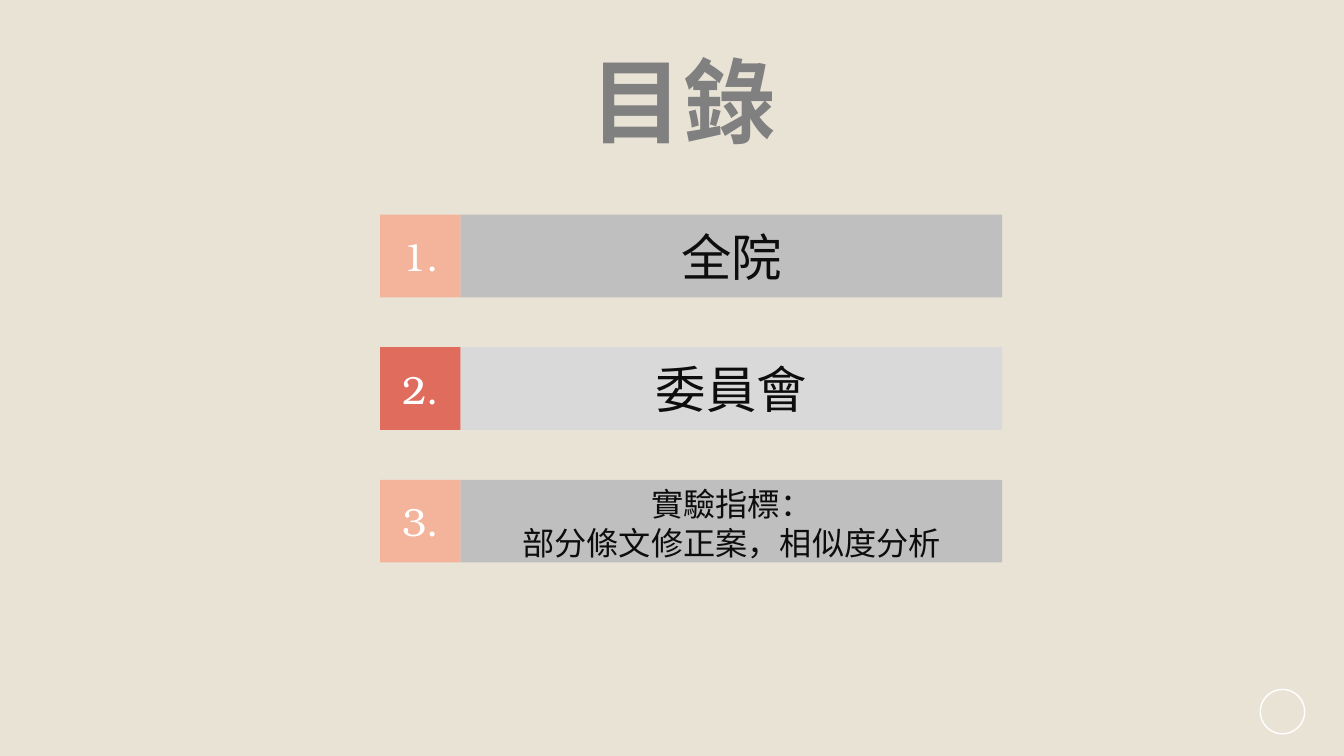
from pptx import Presentation
from pptx.dml.color import RGBColor
from pptx.enum.shapes import MSO_SHAPE as Shape
from pptx.enum.text import MSO_ANCHOR as Anchor, MSO_AUTO_SIZE as AutoSize, PP_ALIGN as Align
from pptx.oxml.ns import qn
from pptx.util import Inches, Pt
from lxml.etree import SubElement

SAND = RGBColor(0xE9, 0xE3, 0xD6)
WHITE = RGBColor(0xFF, 0xFF, 0xFF)
INK = RGBColor(0x0D, 0x0D, 0x0D)
GRAY = RGBColor(0x80, 0x80, 0x80)
SILVER = RGBColor(0xBF, 0xBF, 0xBF)
PALE = RGBColor(0xD9, 0xD9, 0xD9)
PEACH = RGBColor(0xF4, 0xB3, 0x9B)
CORAL = RGBColor(0xDF, 0x6C, 0x5D)

SANS = "Noto Sans CJK SC"
SERIF = "TeX Gyre Bonum"


class Contents:
    def __init__(self, slide):
        self.slide = slide
        slide.background.fill.solid()
        slide.background.fill.fore_color.rgb = SAND

    def add_lines(self, frame, lines, size, color, face=SANS, bold=False, align=Align.CENTER):
        for index, line in enumerate(lines):
            paragraph = frame.add_paragraph() if index else frame.paragraphs[0]
            paragraph.alignment = align
            run = paragraph.add_run()
            run.text = line
            font = run.font
            font.size, font.bold, font.name = Pt(size), bold, face
            font.color.rgb = color
            SubElement(run._r.rPr, qn("a:ea")).set("typeface", SANS)

    def title(self, text, left, top, width, height):
        heading = self.slide.shapes.title
        heading.left, heading.top = Inches(left), Inches(top)
        heading.width, heading.height = Inches(width), Inches(height)
        frame = heading.text_frame
        frame.vertical_anchor = Anchor.MIDDLE
        frame.auto_size = AutoSize.NONE
        self.add_lines(frame, [text], 66, GRAY, bold=True, align=Align.LEFT)
        frame.paragraphs[0].line_spacing = 0.9

    def block(self, left, top, width, height, fill):
        block = self.slide.shapes.add_shape(
            Shape.RECTANGLE, Inches(left), Inches(top), Inches(width), Inches(height))
        block.shadow.inherit = False
        block.fill.solid()
        block.fill.fore_color.rgb = fill
        block.line.fill.background()
        block.text_frame.vertical_anchor = Anchor.MIDDLE
        return block.text_frame

    def ring(self, left, top, size):
        ring = self.slide.shapes.add_shape(
            Shape.OVAL, Inches(left), Inches(top), Inches(size), Inches(size))
        ring.shadow.inherit = False
        ring.fill.background()
        ring.line.color.rgb = WHITE
        ring.line.width = Pt(1)

    def caption(self, lines, left, top, width, height, size):
        caption = self.slide.shapes.add_textbox(
            Inches(left), Inches(top), Inches(width), Inches(height))
        caption.text_frame.word_wrap = False
        caption.text_frame.auto_size = AutoSize.SHAPE_TO_FIT_TEXT
        self.add_lines(caption.text_frame, lines, size, INK)


def main():
    deck = Presentation()
    deck.slide_width, deck.slide_height = Inches(13.33), Inches(7.5)
    contents = Contents(deck.slides.add_slide(deck.slide_layouts[5]))
    contents.ring(12.5, 6.84, 0.44)
    contents.title("目錄", 5.76, 0.18, 2.74, 1.75)

    chapters = [
        ("全院", "Arial", PEACH, SILVER),
        ("委員會", SANS, CORAL, PALE),
        ("", SANS, PEACH, SILVER),
    ]
    for index, (chapter, face, number_fill, bar_fill) in enumerate(chapters):
        top = 2.13 + 1.315 * index
        number = contents.block(3.77, top, 0.8, 0.82, number_fill)
        contents.add_lines(number, [f"{index + 1}."], 28, WHITE, SERIF)
        bar = contents.block(4.57, top, 5.37, 0.82, bar_fill)
        if chapter:
            contents.add_lines(bar, [chapter], 36, INK, face)

    contents.caption(["實驗指標：", "部分條文修正案，相似度分析"], 5.06, 4.76, 4.4, 0.88, 23)
    deck.save("out.pptx")


if __name__ == "__main__":
    main()
